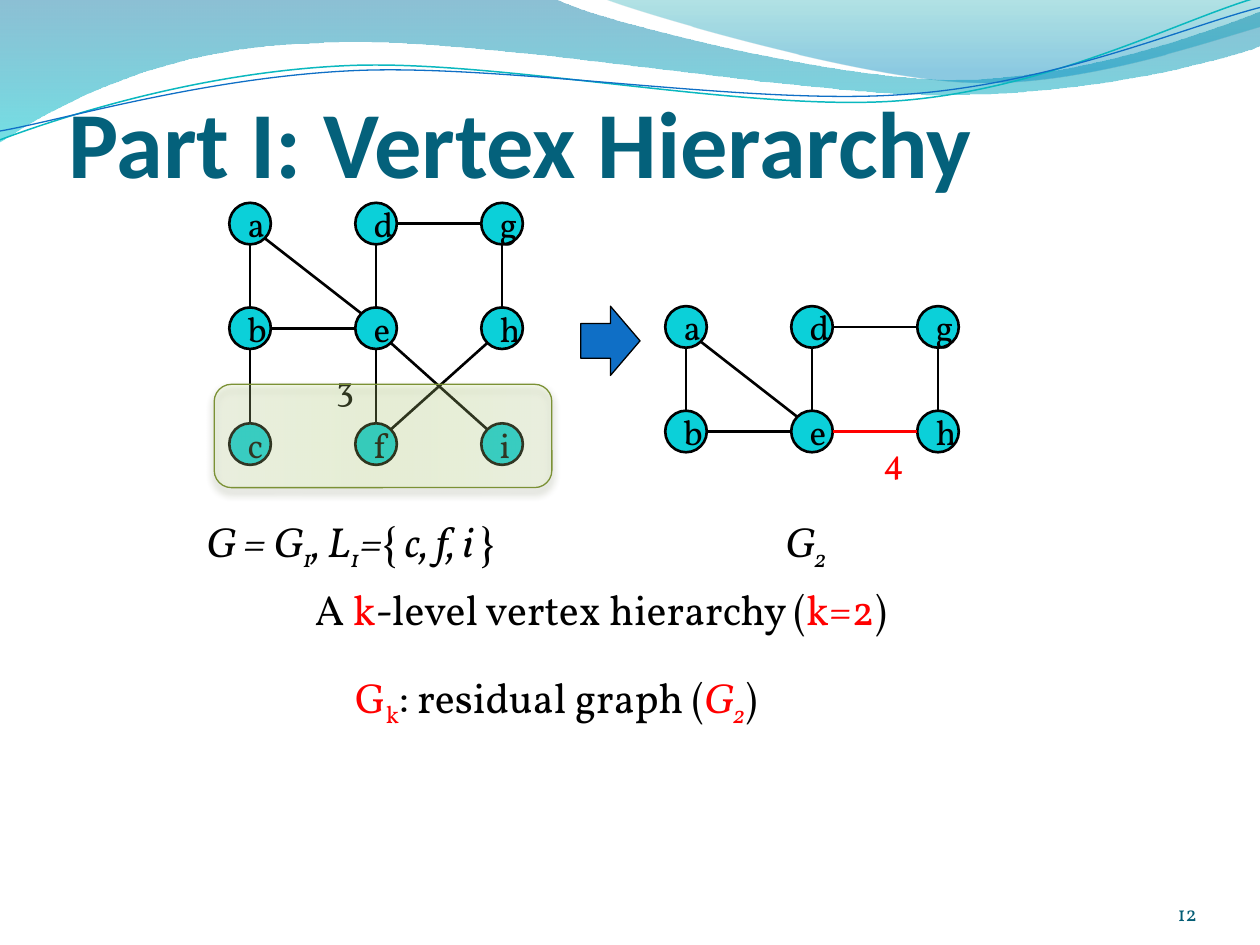
import math
from dataclasses import dataclass

import lxml.etree
import pptx
import pptx.dml.color
import pptx.enum.shapes
import pptx.enum.text
import pptx.oxml.ns
import pptx.util

Inches, Pt = pptx.util.Inches, pptx.util.Pt
Shape = pptx.enum.shapes.MSO_SHAPE
Align = pptx.enum.text.PP_ALIGN
Anchor = pptx.enum.text.MSO_ANCHOR
Fit = pptx.enum.text.MSO_AUTO_SIZE
qn = pptx.oxml.ns.qn
add = lxml.etree.SubElement


@dataclass(frozen=True)
class Theme:
    head: str = "Calibri"
    body: str = "Vollkorn"
    black: str = "000000"
    red: str = "FF0000"
    title: str = "04617B"
    page: str = "045D75"
    node: str = "0BD0D9"
    blue: str = "0F6FC6"
    teal: str = "0AB8BF"
    olive: str = "7B9135"
    shade: str = "3A4519"
    big: int = 54
    text: int = 24
    label: int = 20
    small: int = 12
    # Gradient stops: position, colour, opacity (all in percent)
    left: tuple = ((0, "0074A1", 45), (100, "00C6CF", 55))
    right: tuple = ((0, "00A1A9", 30), (80, "008BBF", 45))
    band: tuple = ((0, "E2F5BA", 20), (30, "D7F399", 20), (45, "D3F28E", 20),
                   (55, "D3F28E", 20), (73, "D7F399", 20), (100, "E2F5BA", 20))


class Deck:
    """Holds the theme and the current slide."""
    size = 0.33  # node width

    def __init__(self, theme):
        self.theme = theme
        self.show = pptx.Presentation()
        self.show.slide_width, self.show.slide_height = Inches(10), Inches(7.5)
        self.shapes = self.show.slides.add_slide(self.show.slide_layouts[5]).shapes

    def color(self, code):
        return pptx.dml.color.RGBColor.from_string(code)

    def run(self, par, text, size, color, font=None, marks=""):
        """Marks: b bold, i italic, s subscript, r red."""
        run = par.add_run()
        run.text = text
        run.font.name, run.font.size = font or self.theme.body, Pt(size)
        run.font.bold, run.font.italic = "b" in marks, "i" in marks
        run.font.color.rgb = self.color(self.theme.red if "r" in marks else color)
        if "s" in marks:
            run.font._element.set("baseline", "-25000")

    def lower(self, frame):
        """Set text on the floor of its box, without side insets."""
        frame.auto_size, frame.vertical_anchor = Fit.NONE, Anchor.BOTTOM
        frame.margin_left = frame.margin_right = frame.margin_bottom = 0

    def title(self, text, box):
        shape = self.shapes.title
        self.shapes._spTree.append(shape._element)  # in front of the waves
        shape.left, shape.top, shape.width, shape.height = map(Inches, box)
        self.lower(shape.text_frame)
        par = shape.text_frame.paragraphs[0]
        par.alignment = Align.LEFT
        self.run(par, text, self.theme.big, self.theme.title, self.theme.head, "b")

    def text(self, box, runs, size, align=Align.LEFT, color=None):
        frame = self.shapes.add_textbox(*map(Inches, box)).text_frame
        frame.word_wrap, frame.auto_size = True, Fit.SHAPE_TO_FIT_TEXT
        frame.paragraphs[0].alignment = align
        for text, marks in runs:
            self.run(frame.paragraphs[0], text, size, color or self.theme.black,
                     marks=marks)
        return frame

    def style(self, shape, fill=None, line=None, width=0.75):
        shape.shadow.inherit = False
        shape.fill.background()
        if fill:
            shape.fill.solid()
            shape.fill.fore_color.rgb = self.color(fill)
        shape.line.fill.background()
        if line:
            shape.line.color.rgb = self.color(line)
            shape.line.width = Pt(width)
        return shape

    def tint(self, parent, code, alpha):
        color = add(parent, qn("a:srgbClr"), val=code)
        add(color, qn("a:alpha"), val=str(alpha * 1000))

    def blend(self, shape, stops, angle):
        """Swap an empty fill for a gradient with opacity."""
        props = shape._element.spPr
        grad = lxml.etree.Element(qn("a:gradFill"), rotWithShape="1")
        group = add(grad, qn("a:gsLst"))
        for pos, code, alpha in stops:
            self.tint(add(group, qn("a:gs"), pos=str(pos * 1000)), code, alpha)
        add(grad, qn("a:lin"), ang=str(angle * 60000), scaled="0")
        props.replace(props.find(qn("a:noFill")), grad)

    def shadow(self, shape, code, alpha, blur, dist):
        cast = add(shape._element.spPr.find(qn("a:effectLst")), qn("a:outerShdw"),
                   blurRad=str(Pt(blur)), dist=str(Pt(dist)), dir="5400000",
                   rotWithShape="0")
        self.tint(cast, code, alpha)

    def shape(self, kind, box, fill=None, line=None, width=0.75):
        item = self.shapes.add_shape(kind, *map(Inches, box))
        return self.style(item, fill, line, width)

    def wave(self, points, bends, stops=None, line=None, width=0.75, pivot=None):
        """Points take three per bend; a pivot tilts the wave about itself."""
        tilt = -2.7 if pivot else 0
        if pivot:
            turn = complex(math.cos(math.radians(tilt)), -math.sin(math.radians(tilt)))
            spins = [complex(*pivot) + (complex(*p) - complex(*pivot)) * turn
                     for p in points]
            points = [(spin.real, spin.imag) for spin in spins]
        spots = [(Inches(x), Inches(y)) for x, y in points]
        pen = self.shapes.build_freeform(*spots[0])
        pen.add_line_segments(spots[1:], close=bool(stops))
        item = self.style(pen.convert_to_shape(), line=line, width=width)
        item.rotation = tilt % 360
        edges = list(item._element.iter(qn("a:lnTo")))
        for first in range(0, 3 * bends, 3):
            curve = lxml.etree.Element(qn("a:cubicBezTo"))
            edges[first].addprevious(curve)
            for edge in edges[first:first + 3]:
                curve.append(edge[0])
                edge.getparent().remove(edge)
        if stops:
            self.blend(item, stops, 90)

    def node(self, name, x, y):
        frame = self.shape(Shape.OVAL, (x, y, self.size, self.size),
                           self.theme.node, self.theme.black, 1.5).text_frame
        frame.vertical_anchor = Anchor.MIDDLE
        frame.paragraphs[0].alignment = Align.CENTER
        self.run(frame.paragraphs[0], name, self.theme.label, self.theme.black)

    def edge(self, start, end, color, width):
        """Join two nodes at the nearest of eight points on their rims."""
        signs = [(b > a) - (b < a) for a, b in zip(start, end)]
        half = self.size / 2
        step = [half * s / math.hypot(*signs) for s in signs]
        ends = ([a + half + s for a, s in zip(start, step)]
                + [b + half - s for b, s in zip(end, step)])
        line = self.shapes.add_connector(
            pptx.enum.shapes.MSO_CONNECTOR.STRAIGHT, *map(Inches, ends))
        line.line.color.rgb, line.line.width = self.color(color), Pt(width)
        add(line._element.spPr, qn("a:effectLst"))

    def graph(self, left, rows, names, edges, strong=()):
        """Each string in names is a column, one inch from the next."""
        spots = {name: (left + col, y) for col, part in enumerate(names)
                 for name, y in zip(part, rows)}
        for name, spot in spots.items():
            self.node(name, *spot)
        for a, b in edges:
            self.edge(spots[a], spots[b], self.theme.black, 1.5)
        for a, b in strong:
            self.edge(spots[a], spots[b], self.theme.red, 2.25)


def main():
    theme = Theme()
    deck = Deck(theme)
    # Waves along the top
    deck.wave([(10, 0.09), (9.58, 0.26), (8.53, 0.63), (7.58, 0.63), (6.64, 0.63),
               (4.76, 0.17), (4.4, -0.01), (0, 0), (-0.01, 1.13), (0.46, 0.83),
               (1.29, 0.36), (2.57, 0.34), (3.82, 0.28), (6.22, 0.75), (7.46, 0.75),
               (8.7, 0.76), (9.83, 0.44), (10.01, 0.36)][6::-1]
              + [(10.01, 0.36), (10.01, 0.36), (10.01, 0.36), (9.83, 0.44),
                 (8.7, 0.76), (7.46, 0.75), (6.22, 0.75), (3.82, 0.28), (2.57, 0.34),
                 (1.29, 0.36), (0.46, 0.83), (-0.01, 1.13), (0, 0)], 6, theme.left)
    deck.wave([(4.79, -0.01), (5.09, 0.11), (6.82, 0.62), (7.69, 0.65),
               (8.56, 0.69), (9.61, 0.32), (10, 0.21), (10, 0)], 2, theme.right)
    deck.wave([(0, 1.11), (0.48, 0.93), (1.58, 0.57), (2.77, 0.52), (3.95, 0.47),
               (5.93, 0.89), (7.13, 0.8), (8.33, 0.71), (9.38, 0.15), (9.98, -0.02)],
              3, line=theme.teal, width=0.85, pivot=(4.99, 0.58))
    deck.wave([(0, 1.04), (0.47, 0.96), (1.64, 0.61), (2.83, 0.56), (4.03, 0.51),
               (5.97, 0.84), (7.17, 0.75), (8.36, 0.67), (9.41, 0.21), (10, 0.06)],
              3, line=theme.blue, pivot=(5, 0.59))
    # Title and page number
    deck.title("Part I: Vertex Hierarchy", (0.54, 0.32, 9, 1.25))
    deck.lower(deck.text((8.67, 6.95, 0.83, 0.4), [("12", "")], theme.small,
                         Align.RIGHT, theme.page))
    # First graph, with its removed level under a band
    deck.graph(1.82, (1.61, 2.44, 3.36), ("abc", "def", "ghi"),
               ("ab", "bc", "de", "ef", "gd", "ei", "gh", "hf", "ea", "eb"))
    deck.text((2.57, 2.86, 0.3, 0.44), [("3", "")], theme.label)
    band = deck.shape(Shape.ROUNDED_RECTANGLE, (1.7, 3.05, 2.68, 0.82),
                      line=theme.olive)
    deck.blend(band, theme.band, 0)
    deck.shadow(band, theme.shade, 48, 4.5, 3)
    # Arrow and second graph
    deck.shape(Shape.DOWN_ARROW, (4.57, 2.47, 0.55, 0.47),
               theme.blue, theme.black).rotation = 270
    deck.graph(5.28, (2.43, 3.26), ("ab", "de", "gh"),
               ("ab", "de", "gd", "gh", "ea", "eb"), strong=("he",))
    deck.text((6.91, 3.44, 0.48, 0.44), [("4", "r")], theme.label)
    # Captions
    deck.text((1.54, 4.04, 2.83, 0.5),
              [("G = G", "i"), ("1", "is"), (", L", "i"), ("1", "is"), ("=", "i"),
               ("{ ", ""), ("c, f, i ", "i"), ("}", "")], theme.text)
    deck.text((5.04, 4.04, 2.71, 0.5), [("G", "i"), ("2", "is")],
              theme.text, Align.CENTER)
    deck.text((2.4, 4.58, 4.88, 0.5),
              [("A ", ""), ("k", "r"), ("-level vertex hierarchy (", ""),
               ("k=2", "r"), (")", "")], theme.text)
    deck.text((2.72, 5.28, 4.22, 0.5),
              [("G", "r"), ("k", "rs"), (": residual graph (", ""),
               ("G", "ri"), ("2", "ris"), (")", "")], theme.text)
    deck.show.save("out.pptx")


if __name__ == "__main__":
    main()
